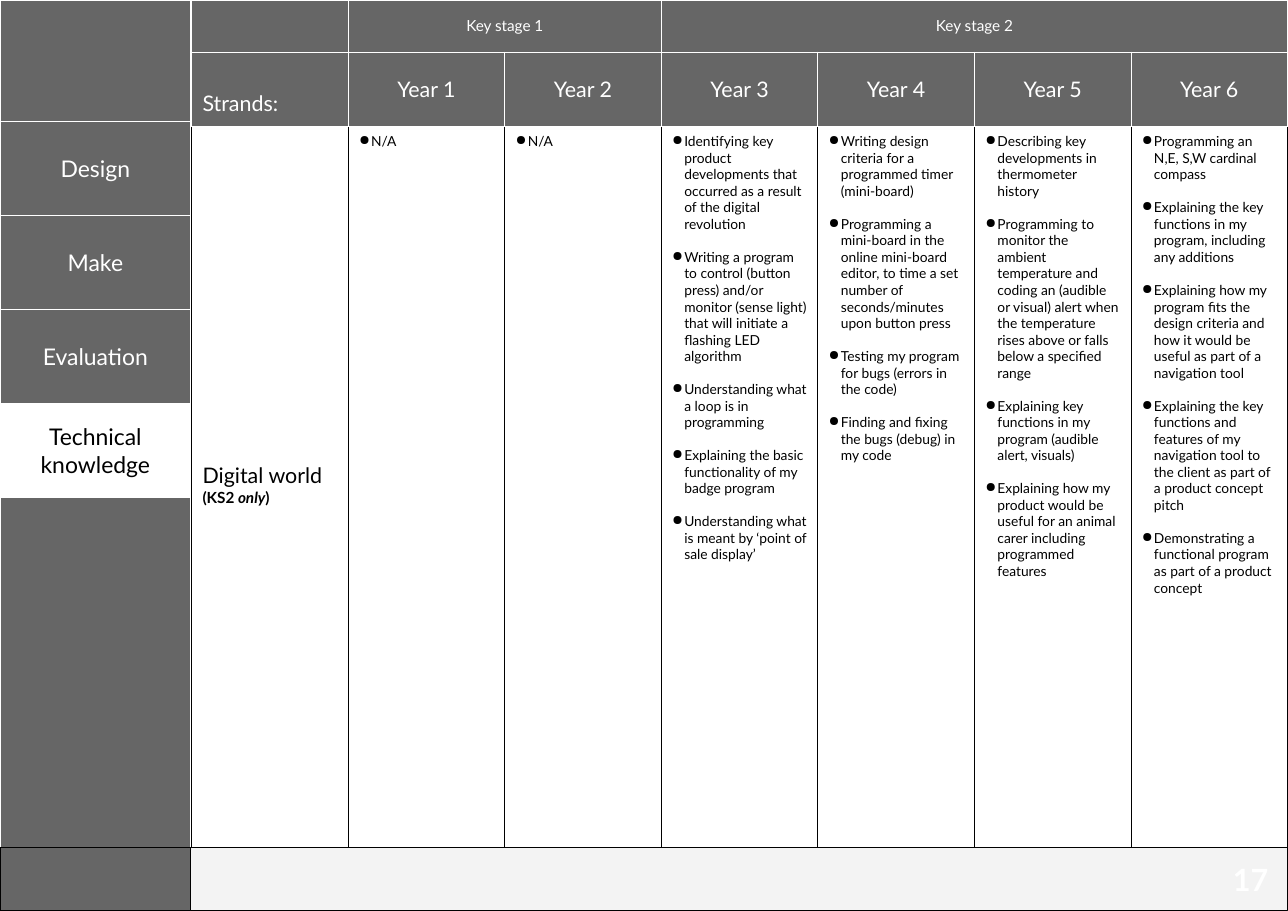
from dataclasses import dataclass

from lxml import etree
from pptx import Presentation
from pptx import util as u
from pptx.dml.color import RGBColor
from pptx.enum import shapes, text
from pptx.oxml import ns

WIDTH, HEIGHT = 29.7, 21
SIDE_W, GRID_X, COL_W = 4.4, 4.42, 3.61
BODY_Y, FOOTER_Y = 2.82, 19.53
MIDDLE, BOTTOM = text.MSO_ANCHOR.MIDDLE, text.MSO_ANCHOR.BOTTOM
CENTER, RIGHT = text.PP_ALIGN.CENTER, text.PP_ALIGN.RIGHT


@dataclass(frozen=True)
class Theme:
    """Colours, font and type sizes of the slide."""
    grey: str = "666666"
    pale: str = "F3F3F3"
    white: str = "FFFFFF"
    black: str = "000000"
    font: str = "Lato"
    small: float = 9
    note: float = 10
    heading: float = 14
    side: float = 15
    page: float = 20
    line: float = 0.75


class Board:
    """Draws styled elements on one slide."""

    def __init__(self, slide, theme):
        self.slide, self.theme = slide, theme

    def style(self, p, size, color, bold=False, align=None):
        """Format the runs of a paragraph."""
        p.alignment = align
        for r in p.runs:
            r.font.name, r.font.size = self.theme.font, u.Pt(size)
            r.font.bold = bold
            r.font.color.rgb = RGBColor.from_string(color)

    def table(self, x, y, widths, heights, border):
        """Add a plain table with one border colour."""
        frame = self.slide.shapes.add_table(
            len(heights), len(widths), u.Cm(x), u.Cm(y),
            u.Cm(sum(widths)), u.Cm(sum(heights)))
        table = frame.table
        table.first_row = table.horz_banding = False
        for col, width in zip(table.columns, widths):
            col.width = u.Cm(width)
        for row, height in zip(table.rows, heights):
            row.height = u.Cm(height)
        for cell in table.iter_cells():
            self.border(cell, border)
            self.fill(cell, self.theme.grey)
        return table

    def border(self, cell, color):
        """Draw all four borders of a cell."""
        props = cell._tc.get_or_add_tcPr()
        for i, side in enumerate(("lnL", "lnR", "lnT", "lnB")):
            ln = etree.Element(ns.qn(f"a:{side}"), w=str(u.Pt(self.theme.line)))
            solid = etree.SubElement(ln, ns.qn("a:solidFill"))
            etree.SubElement(solid, ns.qn("a:srgbClr"), val=color)
            props.insert(i, ln)

    def fill(self, target, color):
        """Fill a cell or shape with a solid colour."""
        target.fill.solid()
        target.fill.fore_color.rgb = RGBColor.from_string(color)

    def inset(self, cell, anchor=None):
        """Give a cell even margins and an anchor."""
        cell.margin_left = cell.margin_right = u.Cm(0.25)
        cell.margin_top = cell.margin_bottom = u.Cm(0.25)
        cell.vertical_anchor = anchor

    def label(self, cell, words, size, color, align=CENTER, anchor=MIDDLE):
        """Write one line of text in a cell."""
        self.inset(cell, anchor)
        p = cell.text_frame.paragraphs[0]
        p.text = words
        self.style(p, size, color, align=align)

    def bullets(self, cell, items):
        """Write a bulleted list in a cell."""
        self.inset(cell)
        tf = cell.text_frame
        for i, item in enumerate(items):
            p = tf.add_paragraph() if i else tf.paragraphs[0]
            p.text = item
            props = p._p.get_or_add_pPr()
            props.set("marL", str(u.Cm(0.28)))
            props.set("indent", str(-u.Cm(0.28)))
            if i:
                p.space_before = u.Pt(10.8)
            color = etree.SubElement(props, ns.qn("a:buClr"))
            etree.SubElement(color, ns.qn("a:srgbClr"), val=self.theme.black)
            etree.SubElement(props, ns.qn("a:buChar"), char="●")
            self.style(p, self.theme.small, self.theme.black)

    def box(self, x, y, w, h, color):
        """Add an outlined rectangle."""
        sp = self.slide.shapes.add_shape(
            shapes.MSO_SHAPE.RECTANGLE, u.Cm(x), u.Cm(y), u.Cm(w), u.Cm(h))
        sp.shadow.inherit = False
        self.fill(sp, color)
        sp.line.color.rgb = RGBColor.from_string(self.theme.black)
        sp.line.width = u.Pt(self.theme.line)

    def page_number(self, number, x, y, w, h):
        """Add the right-aligned page number."""
        sp = self.slide.shapes.add_textbox(u.Cm(x), u.Cm(y), u.Cm(w), u.Cm(h))
        tf = sp.text_frame
        tf.word_wrap, tf.vertical_anchor = True, MIDDLE
        tf.text = number
        self.style(tf.paragraphs[0], self.theme.page, self.theme.white, True, RIGHT)


SECTIONS = ["Design", "Make", "Evaluation", "Technical knowledge"]
SKILLS = [
    ["N/A"],
    ["N/A"],
    ["Identifying key product developments that occurred as a result of the digital revolution",
     "Writing a program to control (button press) and/or monitor (sense light) that will "
     "initiate a flashing LED algorithm",
     "Understanding what a loop is in programming",
     "Explaining the basic functionality of my badge program",
     "Understanding what is meant by ‘point of sale display’"],
    ["Writing design criteria for a programmed timer (mini-board)",
     "Programming a mini-board in the online mini-board editor, to time a set number of "
     "seconds/minutes upon button press",
     "Testing my program for bugs (errors in the code)",
     "Finding and fixing the bugs (debug) in my code"],
    ["Describing key developments in thermometer history",
     "Programming to monitor the ambient temperature and coding an (audible or visual) alert "
     "when the temperature rises above or falls below a specified range",
     "Explaining key functions in my program (audible alert, visuals)",
     "Explaining how my product would be useful for an animal carer including programmed features"],
    ["Programming an N,E, S,W cardinal compass",
     "Explaining the key functions in my program, including any additions",
     "Explaining how my program fits the design criteria and how it would be useful as part "
     "of a navigation tool",
     "Explaining the key functions and features of my navigation tool to the client as part "
     "of a product concept pitch",
     "Demonstrating a functional program as part of a product concept"],
]


def main():
    """Build the progression slide."""
    prs = Presentation()
    prs.slide_width, prs.slide_height = u.Cm(WIDTH), u.Cm(HEIGHT)
    t = Theme()
    s = Board(prs.slides.add_slide(prs.slide_layouts[6]), t)
    columns = [COL_W] * (len(SKILLS) + 1)

    side = s.table(0, 0, [SIDE_W], [2.8] + [2.17] * len(SECTIONS) + [9.52], t.white)
    for row, name in enumerate(SECTIONS, 1):
        current = name == SECTIONS[-1]
        s.label(side.cell(row, 0), name, t.side, t.black if current else t.white)
        if current:
            s.fill(side.cell(row, 0), t.white)

    footer_h = HEIGHT - FOOTER_Y
    s.box(SIDE_W, FOOTER_Y, WIDTH - SIDE_W, footer_h, t.pale)
    s.box(0, FOOTER_Y, SIDE_W, footer_h, t.grey)
    s.page_number("17", 27.5, FOOTER_Y, 2, footer_h)

    body = s.table(GRID_X, BODY_Y, columns, [FOOTER_Y - BODY_Y], t.black)
    for cell in body.iter_cells():
        s.fill(cell, t.white)
    strand = body.cell(0, 0)
    s.label(strand, "Digital world", t.heading, t.black, None)
    p = strand.text_frame.add_paragraph()
    for words in ("(KS2 ", "only", ")"):
        r = p.add_run()
        r.text = words
        r.font.italic = words == "only"
    s.style(p, t.note, t.black, True)
    for col, items in enumerate(SKILLS, 1):
        s.bullets(body.cell(0, col), items)

    header = s.table(GRID_X, 0, columns, [1.2, 1.72], t.white)
    for stage, (first, last) in enumerate([(1, 2), (3, 6)], 1):
        header.cell(0, first).merge(header.cell(0, last))
        s.label(header.cell(0, first), f"Key stage {stage}", t.note, t.white)
    s.label(header.cell(1, 0), "Strands:", t.heading, t.white, None, BOTTOM)
    for year in range(1, len(columns)):
        s.label(header.cell(1, year), f"Year {year}", t.heading, t.white)

    prs.save("out.pptx")


if __name__ == "__main__":
    main()
